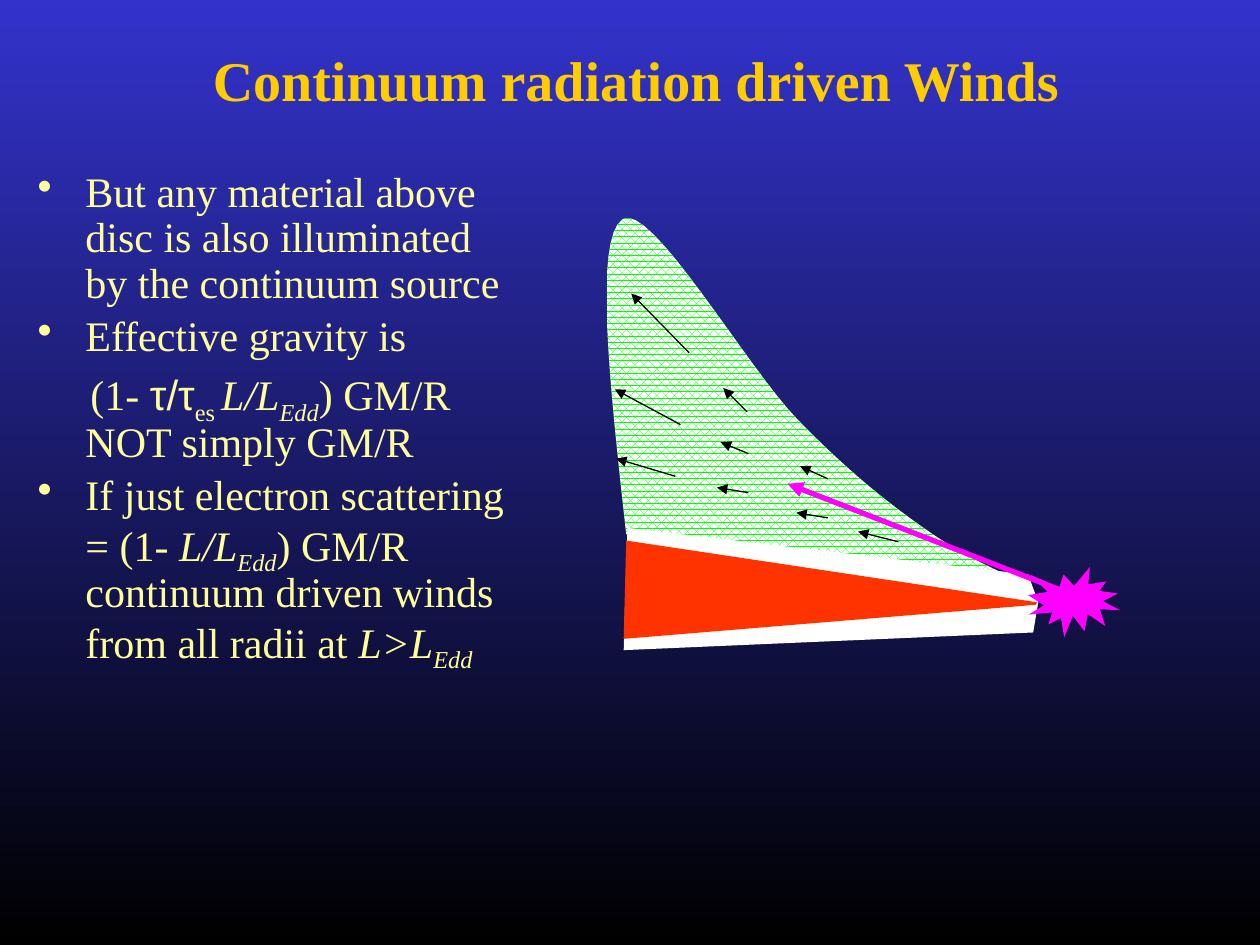
from lxml import etree
from pptx import Presentation
from pptx.dml.color import RGBColor
from pptx.enum.dml import MSO_PATTERN
from pptx.enum.shapes import MSO_CONNECTOR, MSO_SHAPE
from pptx.enum.text import MSO_ANCHOR, PP_ALIGN
from pptx.oxml.ns import qn
from pptx.util import Inches, Pt

LINE = MSO_CONNECTOR.STRAIGHT
SEAL = MSO_SHAPE.EXPLOSION1
DOTS = MSO_PATTERN.PERCENT_70
MIDDLE = MSO_ANCHOR.MIDDLE
CENTER = PP_ALIGN.CENTER
COLS, ROWS = 100, 75
UNIT = Inches(0.1)
SERIF, SANS = "Times New Roman", "Arial"
INK = {"sky": "3333CC", "night": "000000", "title": "FFCC00", "text": "FFFF99",
       "wind": "00FF00", "white": "FFFFFF", "disc": "FF3300", "ray": "FF00FF"}

BODY = [
    (True, [("But any material above disc is also illuminated by the continuum source", "")]),
    (True, [("Effective gravity is", "")]),
    (False, [("(1- ", ""), ("τ/τ", "sans"), ("es ", "sub"), ("L/L", "it"),
             ("Edd", "it sub"), (") GM/R NOT simply GM/R", "")]),
    (True, [("If just electron scattering = (1- ", ""), ("L/L", "it"), ("Edd", "it sub"),
            (") GM/R continuum driven winds from all radii at ", ""),
            ("L>L", "it"), ("Edd", "it sub")]),
]
WIND = [(81.9, 46.5), (79.1, 45.3), (76.4, 44.1), (73.3, 41.9), (70.2, 39.7),
        (67.3, 37.4), (63.3, 33.3), (59.3, 29.2), (51.6, 15.9), (49.4, 17.4),
        (47.1, 19), (48.4, 30.7), (49.7, 42.4)]
GAP = [(82, 50.2), (49.5, 51.6), (49.8, 41.9), (81.6, 45.6), (82.4, 47.8)]
DISC = [(82.2, 48), (49.5, 50.7), (49.7, 42.9), (82.3, 47.8)]
RAY = (85.9, 47.5, 62.5, 38.4)
FLOWS = [(59.3, 32.7, 57.4, 30.8), (59.4, 36, 57.2, 35.1), (59.4, 39.1, 56.9, 38.7),
         (54.7, 28, 50.1, 23.3), (54, 33.7, 48.8, 30.9), (53.6, 37.8, 48.9, 36.4),
         (71.3, 43, 68.1, 42.2), (65.7, 38, 63.5, 37), (65.7, 41.1, 63.2, 40.7)]


def emu(*cells):
    """Turn grid units into whole lengths."""
    return [round(cell * UNIT) for cell in cells]


def rgb(name):
    """Look up a colour by its name."""
    return RGBColor.from_string(INK[name])


def curve(knots, steps=16):
    """Sample a chain of cubic curves as points."""
    points = [knots[0]]
    for first in range(0, len(knots) - 1, 3):
        part = knots[first:first + 4]
        for step in range(1, steps + 1):
            t = step / steps
            share = ((1 - t) ** 3, 3 * t * (1 - t) ** 2, 3 * t * t * (1 - t), t ** 3)
            points.append(tuple(sum(s * p[axis] for s, p in zip(share, part))
                                for axis in (0, 1)))
    return points


def plain(shape, color):
    """Give a shape a flat fill without line or shadow."""
    shape.shadow.inherit = False
    shape.fill.solid()
    shape.fill.fore_color.rgb = rgb(color)
    shape.line.fill.background()


def area(slide, points, color):
    """Draw a closed outline through the points."""
    spots = [emu(*point) for point in points]
    pen = slide.shapes.build_freeform(*spots[0])
    pen.add_line_segments(spots[1:], close=True)
    shape = pen.convert_to_shape()
    plain(shape, color)
    return shape


def arrow(slide, ends, color, width):
    """Draw a line with an arrowhead at its far end."""
    line = slide.shapes.add_connector(LINE, *emu(*ends))
    line.line.color.rgb = rgb(color)
    line.line.width = Pt(width)
    etree.SubElement(line.line._get_or_add_ln(), qn("a:tailEnd"), type="triangle")
    etree.SubElement(line._element.spPr, qn("a:effectLst"))


def style(run, size, color, marks=""):
    """Set the font of one run."""
    font = run.font
    font.name = SANS if "sans" in marks else SERIF
    font.size = Pt(size)
    font.color.rgb = rgb(color)
    font.bold = "bold" in marks
    font.italic = "it" in marks
    if "sub" in marks:
        run._r.get_or_add_rPr().set("baseline", "-25000")


def frame(slide, *cells):
    """Add a wrapping text box and return its frame."""
    text = slide.shapes.add_textbox(*emu(*cells)).text_frame
    text.word_wrap = True
    return text


def title(slide):
    """Write the heading."""
    text = frame(slide, 9.2, 0, 82.6, 12.5)
    text.vertical_anchor = MIDDLE
    text.text = "Continuum radiation driven Winds"
    head = text.paragraphs[0]
    head.alignment = CENTER
    style(head.runs[0], 32, "title", "bold")


def body(slide):
    """Write the list of points."""
    text = frame(slide, 2, 13.1, 39.7, 57.6)
    for index, (dot, parts) in enumerate(BODY):
        para = text.add_paragraph() if index else text.paragraphs[0]
        para.line_spacing = 0.9
        para.space_before = Pt(4.8 if index else 0)
        props = para._p.get_or_add_pPr()
        margin, indent = emu(3.8, -3.8 if dot else 0.4)
        props.set("marL", str(margin))
        props.set("indent", str(indent))
        if dot:
            etree.SubElement(props, qn("a:buChar"), char="•")
        else:
            etree.SubElement(props, qn("a:buNone"))
        for words, marks in parts:
            run = para.add_run()
            run.text = words
            style(run, 24, "text", marks)


def sky(slide):
    """Shade the background from top to bottom."""
    fill = slide.background.fill
    fill.gradient()
    fill.gradient_angle = 270
    for stop, color in zip(fill.gradient_stops, ("sky", "night")):
        stop.color.rgb = rgb(color)


def main():
    """Build the slide and save it."""
    deck = Presentation()
    deck.slide_width, deck.slide_height = emu(COLS, ROWS)
    slide = deck.slides.add_slide(deck.slide_layouts[6])
    sky(slide)
    wind = area(slide, curve(WIND), "wind")
    wind.fill.patterned()
    wind.fill.pattern = DOTS
    wind.fill.fore_color.rgb = rgb("wind")
    wind.fill.back_color.rgb = rgb("white")
    area(slide, GAP, "white")
    title(slide)
    body(slide)
    area(slide, DISC, "disc")
    plain(slide.shapes.add_shape(SEAL, *emu(81.6, 45, 7.3, 5.6)), "ray")
    arrow(slide, RAY, "ray", 3)
    for flow in FLOWS:
        arrow(slide, flow, "night", 0.75)
    deck.save("out.pptx")


if __name__ == "__main__":
    main()
